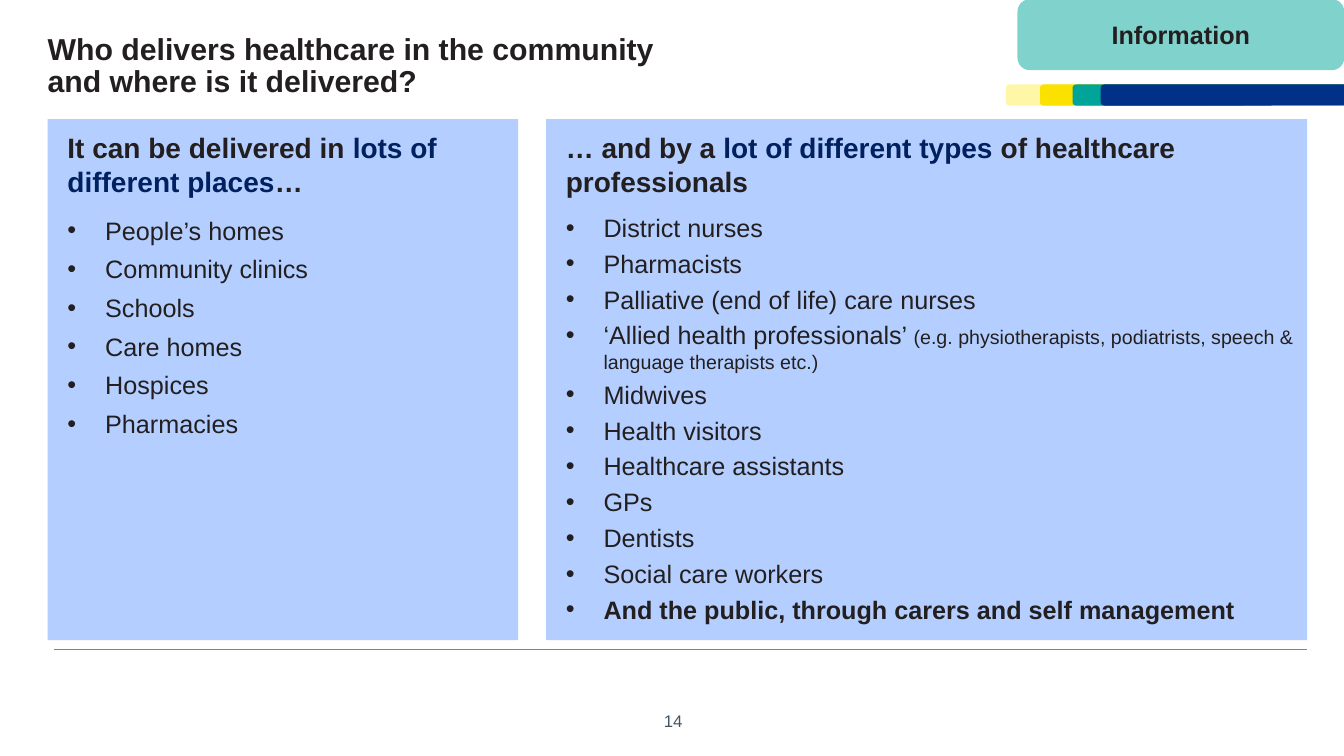
from dataclasses import dataclass

from lxml.etree import SubElement
from pptx import Presentation
from pptx.dml.color import RGBColor
from pptx.enum.shapes import MSO_CONNECTOR, MSO_SHAPE
from pptx.enum.text import MSO_ANCHOR, MSO_AUTO_SIZE, PP_ALIGN
from pptx.oxml.ns import qn
from pptx.util import Cm, Pt


@dataclass(frozen=True)
class Theme:
    font: str = "Arial"
    ink: str = "231F20"
    navy: str = "002060"
    slate: str = "425563"
    rule: str = "768692"
    panel: str = "B4CFFF"
    tag: str = "80D2CC"
    bars: tuple = ("FFF7A7", "FAE100", "00A499", "003087")
    title: float = 21.6
    head: float = 20
    item: float = 18
    small: float = 14
    page: float = 12


THEME = Theme()
PLACES = ["People’s homes", "Community clinics", "Schools", "Care homes",
          "Hospices", "Pharmacies"]
STAFF = ["District nurses", "Pharmacists", "Palliative (end of life) care nurses",
         "‘Allied health professionals’ ", "Midwives", "Health visitors",
         "Healthcare assistants", "GPs", "Dentists", "Social care workers",
         "And the public, through carers and self management"]
NOTES = {STAFF[3]: "(e.g. physiotherapists, podiatrists, speech & language therapists etc.)"}
STRONG = {STAFF[-1]}


def place(shape, left, top, width, height):
    shape.left, shape.top = Cm(left), Cm(top)
    shape.width, shape.height = Cm(width), Cm(height)


def add_run(para, text, size, color=THEME.ink, bold=False):
    run = para.add_run()
    run.text = text
    font = run.font
    font.name, font.size, font.bold = THEME.font, Pt(size), bold
    font.color.rgb = RGBColor.from_string(color)


def set_frame(frame, anchor, insets):
    frame.word_wrap = True
    frame.auto_size = MSO_AUTO_SIZE.NONE
    frame.vertical_anchor = anchor
    (frame.margin_left, frame.margin_top,
     frame.margin_right, frame.margin_bottom) = map(Cm, insets)


def set_bullet(para, mark=None):
    props = para._p.get_or_add_pPr()
    indent = Cm(0.95) if mark else 0
    props.set("marL", str(indent))
    props.set("indent", str(-indent))
    if mark:
        SubElement(props, qn("a:buFont")).set("typeface", THEME.font)
        SubElement(props, qn("a:buChar")).set("char", mark)
    else:
        SubElement(props, qn("a:buNone"))


def set_space(para, before, after, lines=1.0):
    para.space_before, para.space_after = Pt(before), Pt(after)
    para.line_spacing = lines


def fill_title(shape, text):
    place(shape, 1.2, 0.86, 16.36, 1.19)
    set_frame(shape.text_frame, MSO_ANCHOR.TOP, (0, 0, 0, 0))
    para = shape.text_frame.paragraphs[0]
    para.alignment = PP_ALIGN.LEFT
    set_space(para, 0, 0, 0.9)
    add_run(para, text, THEME.title, bold=True)


def fill_panel(shape, left, width, inset, head, items, gap):
    place(shape, left, 3, width, 13.13)
    shape.fill.solid()
    shape.fill.fore_color.rgb = RGBColor.from_string(THEME.panel)
    frame = shape.text_frame
    set_frame(frame, MSO_ANCHOR.TOP, (0.5, 0.3, inset, 0.13))
    para = frame.paragraphs[0]
    set_bullet(para)
    set_space(para, 0, 6)
    for text, color in zip(head, (THEME.ink, THEME.navy, THEME.ink)):
        add_run(para, text, THEME.head, color, True)
    for item in items:
        para = frame.add_paragraph()
        set_bullet(para, "•")
        set_space(para, gap, 0)
        add_run(para, item, THEME.item, bold=item in STRONG)
        if item in NOTES:
            add_run(para, NOTES[item], THEME.small)


def add_block(slide, left, top, width, height, color):
    shape = slide.shapes.add_shape(
        MSO_SHAPE.ROUNDED_RECTANGLE, Cm(left), Cm(top), Cm(width), Cm(height))
    shape.shadow.inherit = False
    shape.fill.solid()
    shape.fill.fore_color.rgb = RGBColor.from_string(color)
    shape.line.fill.background()
    return shape


def add_tag(slide, text):
    shape = add_block(slide, 25.66, 0, 8.2, 1.75, THEME.tag)
    shape.line.color.rgb = RGBColor.from_string(THEME.tag)
    shape.line.width = Pt(1)
    set_frame(shape.text_frame, MSO_ANCHOR.MIDDLE, (0.25, 0.13, 0.25, 0.13))
    para = shape.text_frame.paragraphs[0]
    para.alignment = PP_ALIGN.CENTER
    add_run(para, text, THEME.item, bold=True)


def add_rule(slide):
    line = slide.shapes.add_connector(
        MSO_CONNECTOR.STRAIGHT, Cm(1.35), Cm(16.36), Cm(32.94), Cm(16.36))
    line.line.color.rgb = RGBColor.from_string(THEME.rule)
    line.line.width = Pt(0.5)
    SubElement(line._element.spPr, qn("a:effectLst"))


def add_page(slide, text):
    box = slide.shapes.add_textbox(Cm(16.41), Cm(17.78), Cm(1.04), Cm(0.76))
    box.text_frame.word_wrap = False
    para = box.text_frame.paragraphs[0]
    para.alignment = PP_ALIGN.RIGHT
    add_run(para, text, THEME.page, THEME.slate)


def main():
    deck = Presentation()
    deck.slide_width, deck.slide_height = Cm(33.87), Cm(19.05)
    slide = deck.slides.add_slide(deck.slide_layouts[3])
    title, places, staff = slide.placeholders
    fill_title(title, "Who delivers healthcare in the community and where is it delivered?")
    fill_panel(places, 1.2, 11.86, 0.3,
               ("It can be delivered in ", "lots of different places", "…"), PLACES, 6)
    fill_panel(staff, 13.76, 19.18, 0.25,
               ("… and by a ", "lot of different types ", "of healthcare professionals"),
               STAFF, 4)
    for left, color in zip((25.35, 26.21, 27.03, 27.74), THEME.bars):
        add_block(slide, left, 2.13, 7.62, 0.53, color)
    add_tag(slide, "Information")
    add_rule(slide)
    add_page(slide, "14")
    deck.save("out.pptx")


if __name__ == "__main__":
    main()
